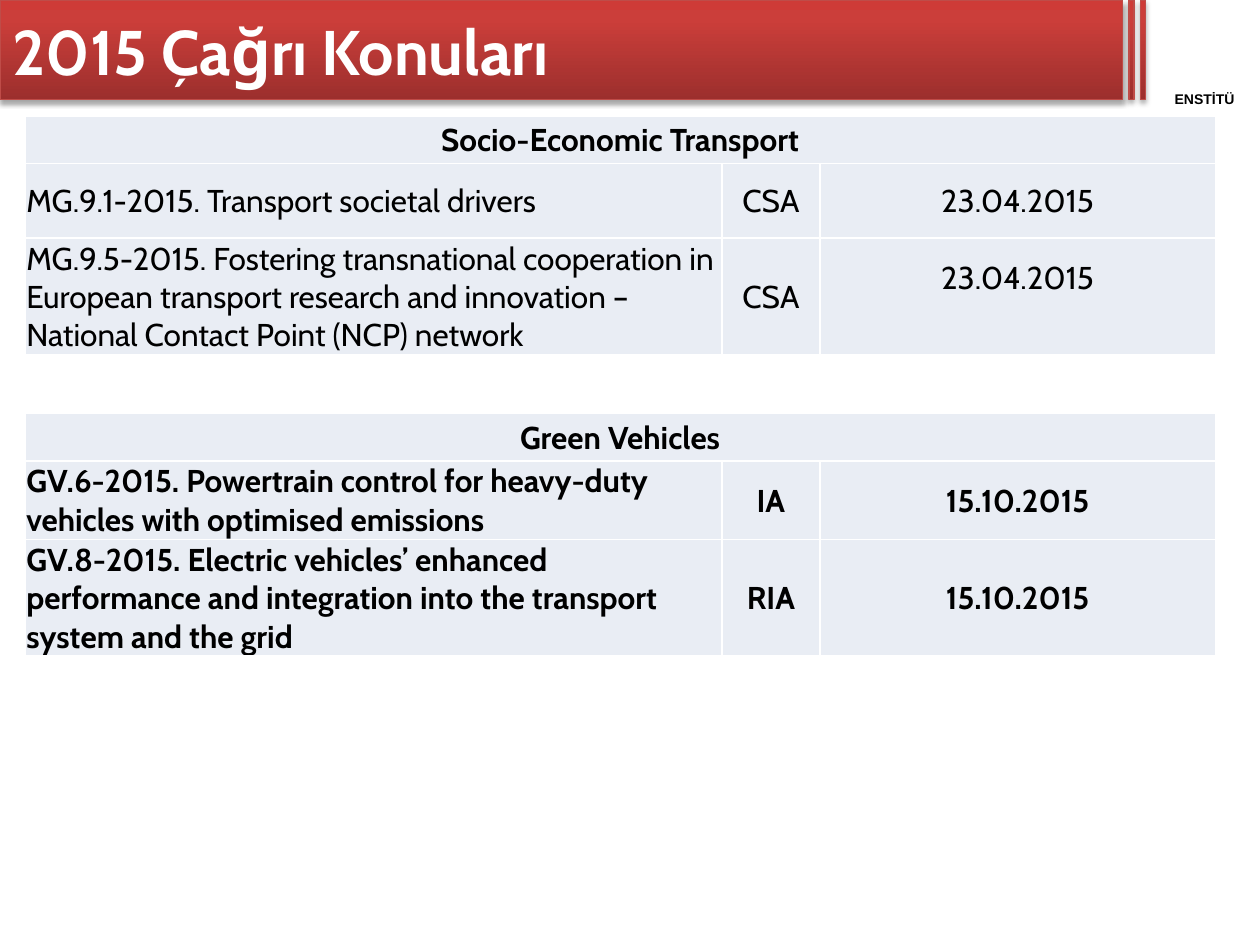
from copy import deepcopy

from lxml import etree
from pptx import Presentation
from pptx import util as u
from pptx.dml.color import RGBColor
from pptx.enum import shapes, text
from pptx.oxml import parse_xml
from pptx.oxml.ns import nsdecls, qn

COLORS = {
    "dark red": "9C2F2D",
    "red": "CB3E3A",
    "bright red": "CE3B37",
    "edge": "BF4C48",
    "cell": "E9EDF4",
    "white": "FFFFFF",
    "black": "000000",
}
COLUMN_WIDTHS = (14.05, 1.98, 7.97)
BAR_HEIGHT = 2.01


def color(name):
    return RGBColor.from_string(COLORS[name])


class SlideBuilder:
    def __init__(self, deck):
        self.page = deck.slides.add_slide(deck.slide_layouts[5])
        self.font_name = "Cabin"

    def format(self, para, size, align, bold=True, ink="black", name=None):
        para.alignment = align
        para.font.name = name or self.font_name
        para.font.size = u.Pt(size)
        para.font.bold = bold
        para.font.color.rgb = color(ink)

    def bar(self, left, width):
        box = self.page.shapes.add_shape(
            shapes.MSO_SHAPE.RECTANGLE, u.Cm(left), 0, u.Cm(width), u.Cm(BAR_HEIGHT))
        box.line.color.rgb = color("edge")
        box.line.width = u.Pt(0.75)
        box.fill.gradient()
        box.fill.gradient_angle = 90
        stop_list = box._element.spPr.find(".//" + qn("a:gsLst"))
        stop_list.append(deepcopy(stop_list[-1]))
        stops = ((0, "dark red"), (0.8, "red"), (1, "bright red"))
        for stop, (position, name) in zip(box.fill.gradient_stops, stops):
            stop.position = position
            stop.color.rgb = color(name)
        box._element.spPr.append(parse_xml(
            f'<a:effectLst {nsdecls("a")}><a:outerShdw blurRad="39400" dist="22900" '
            f'dir="5400000" rotWithShape="0"><a:srgbClr val="{COLORS["black"]}">'
            '<a:alpha val="35000"/></a:srgbClr></a:outerShdw></a:effectLst>'))

    def title(self, words):
        box = self.page.shapes.title
        box.left, box.top, box.width, box.height = u.Cm(0), u.Cm(0.03), u.Cm(23), u.Cm(1.95)
        frame = box.text_frame
        frame.text = words
        frame.vertical_anchor = text.MSO_ANCHOR.MIDDLE
        frame.auto_size = text.MSO_AUTO_SIZE.NONE
        self.format(frame.paragraphs[0], 36, text.PP_ALIGN.LEFT, ink="white")
        self.page.shapes._spTree.append(box._element)

    def label(self, words, left, top, width, height):
        box = self.page.shapes.add_textbox(u.Cm(left), u.Cm(top), u.Cm(width), u.Cm(height))
        frame = box.text_frame
        frame.word_wrap = True
        frame.margin_left = frame.margin_right = frame.margin_top = frame.margin_bottom = 0
        frame.text = words
        self.format(frame.paragraphs[0], 8, text.PP_ALIGN.CENTER, name="Arial")

    def cell(self, cell, words, align, bold):
        cell.text = words
        cell.vertical_anchor = text.MSO_ANCHOR.MIDDLE
        cell.margin_left = cell.margin_right = cell.margin_top = u.Cm(0.03)
        cell.margin_bottom = 0
        properties = cell._tc.get_or_add_tcPr()
        for side in ("a:lnL", "a:lnR", "a:lnT", "a:lnB"):
            border = etree.SubElement(properties, qn(side), w=str(u.Pt(1)))
            fill = etree.SubElement(border, qn("a:solidFill"))
            etree.SubElement(fill, qn("a:srgbClr"), val=COLORS["white"])
        cell.fill.solid()
        cell.fill.fore_color.rgb = color("cell")
        self.format(cell.text_frame.paragraphs[0], 18, align, bold)

    def table(self, top, heading, topics, heights, bold):
        rows = [(heading, "", "")] + topics
        frame = self.page.shapes.add_table(
            len(rows), len(COLUMN_WIDTHS), u.Cm(0.5), u.Cm(top),
            u.Cm(sum(COLUMN_WIDTHS)), u.Cm(sum(heights)))
        table = frame.table
        table.first_row = table.horz_banding = False
        for column, width in zip(table.columns, COLUMN_WIDTHS):
            column.width = u.Cm(width)
        for i, (row, height) in enumerate(zip(rows, heights)):
            table.rows[i].height = u.Cm(height)
            for j, words in enumerate(row):
                topic = i > 0 and j == 0
                align = text.PP_ALIGN.LEFT if topic else text.PP_ALIGN.CENTER
                self.cell(table.cell(i, j), words, align, bold or i == 0)
        table.cell(0, 0).merge(table.cell(0, len(COLUMN_WIDTHS) - 1))
        return table


def main():
    deck = Presentation()
    deck.slide_width, deck.slide_height = u.Cm(25.4), u.Cm(19.05)
    slide = SlideBuilder(deck)
    for left, width in ((0, 22.63), (22.76, 0.1), (22.99, 0.1)):
        slide.bar(left, width)
    slide.label("ENSTİTÜ", 22.99, 1.83, 2.59, 0.33)
    slide.title("2015 Çağrı Konuları")

    transport = slide.table(2.34, "Socio-Economic Transport", [
        ("MG.9.1-2015. Transport societal drivers", "CSA", "23.04.2015"),
        ("MG.9.5-2015. Fostering transnational cooperation in European transport "
         "research and innovation – National Contact Point (NCP) network",
         "CSA", "23.04.2015"),
    ], (0.96, 1.5, 2.33), bold=False)
    transport.cell(2, 2).margin_bottom = u.Cm(0.78)

    slide.table(8.33, "Green Vehicles", [
        ("GV.6-2015. Powertrain control for heavy-duty vehicles with optimised emissions",
         "IA", "15.10.2015"),
        ("GV.8-2015. Electric vehicles’ enhanced performance and integration into "
         "the transport system and the grid", "RIA", "15.10.2015"),
    ], (0.96, 1.57, 2.33), bold=True)
    deck.save("out.pptx")


if __name__ == "__main__":
    main()
